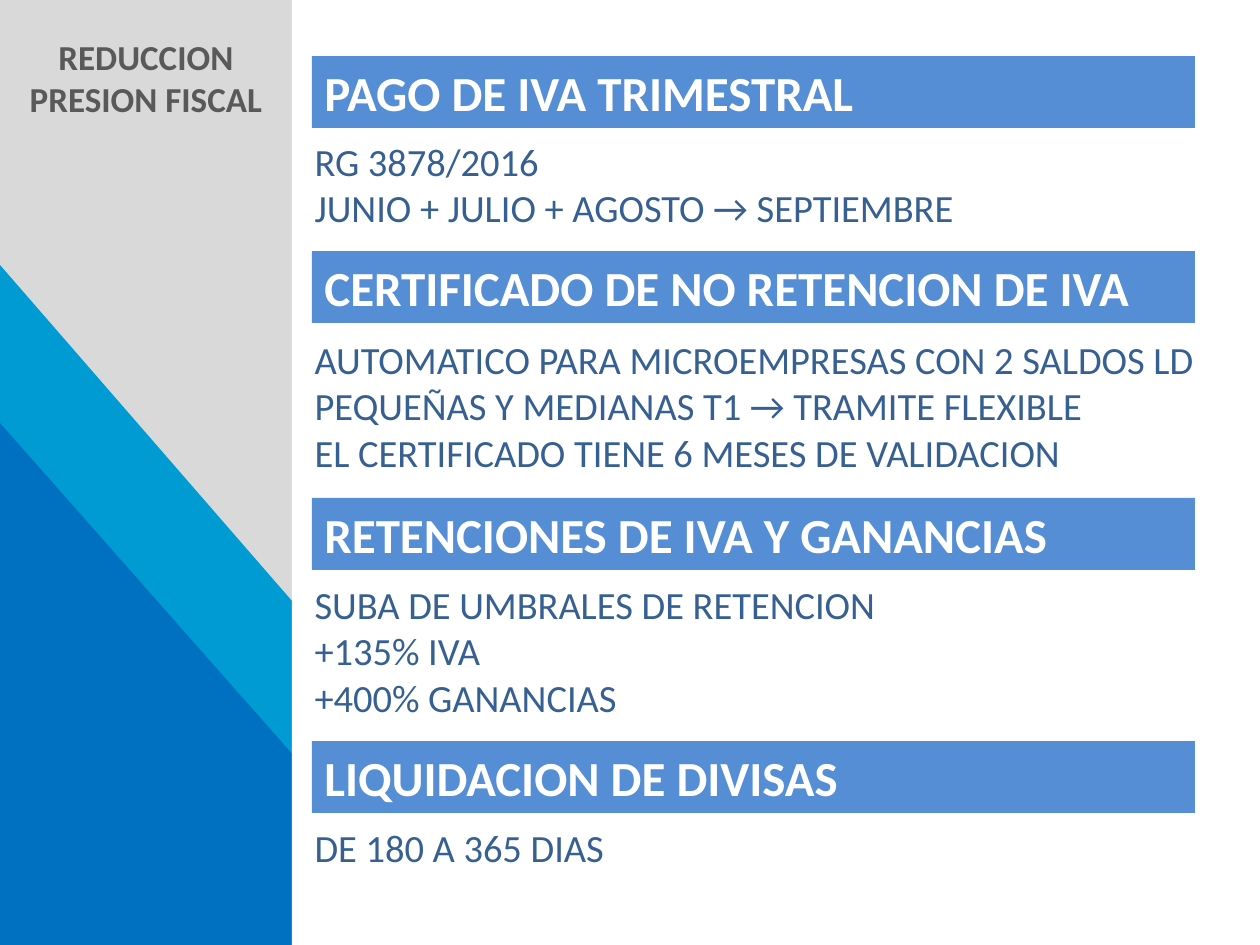
from typing import NamedTuple

from lxml import etree
from pptx import Presentation
from pptx import util as u
from pptx.dml.color import RGBColor
from pptx.enum import shapes, text
from pptx.oxml.ns import qn

SCALE = u.Inches(1) / 126  # EMU per px
PAGE_W, PAGE_H = 1260, 945
PANEL_W = 292
BAR_X, BAR_W, BAR_H = 312, 883, 72
BODY_X, BODY_W = 302, 912
COMPARISON_LAYOUT = 4  # a title and four body placeholders

FONT = "Calibri"
WHITE = RGBColor(0xFF, 0xFF, 0xFF)
LIGHT_GREY = RGBColor(0xD9, 0xD9, 0xD9)
DARK_GREY = RGBColor(0x59, 0x59, 0x59)
CYAN = RGBColor(0x00, 0x9B, 0xD2)
DEEP_BLUE = RGBColor(0x00, 0x70, 0xC0)
BAR_BLUE = RGBColor(0x55, 0x8E, 0xD5)
TEXT_BLUE = RGBColor(0x37, 0x60, 0x92)


class Box(NamedTuple):
    left: int
    top: int
    width: int
    height: int


class Panel(NamedTuple):
    kind: shapes.MSO_SHAPE
    box: Box
    color: RGBColor


class Style(NamedTuple):
    size: int
    color: RGBColor
    bold: bool
    align: text.PP_ALIGN


class Section(NamedTuple):
    bar_top: int
    heading: str
    body_top: int
    body_height: int
    lines: tuple[str, ...]


TITLE = Style(20, DARK_GREY, True, text.PP_ALIGN.CENTER)
HEADING = Style(28, WHITE, True, text.PP_ALIGN.LEFT)
BODY = Style(22, TEXT_BLUE, False, text.PP_ALIGN.LEFT)

RECTANGLE = shapes.MSO_SHAPE.RECTANGLE
TRIANGLE = shapes.MSO_SHAPE.RIGHT_TRIANGLE

PANELS = (
    Panel(RECTANGLE, Box(0, 0, PANEL_W, PAGE_H), LIGHT_GREY),
    Panel(TRIANGLE, Box(0, 265, 591, PAGE_H - 265), CYAN),
    Panel(TRIANGLE, Box(0, 423, 461, PAGE_H - 423), DEEP_BLUE),
    Panel(RECTANGLE, Box(PANEL_W, 0, PAGE_W - PANEL_W, PAGE_H), WHITE),
)

SECTIONS = (
    Section(56, "PAGO DE IVA TRIMESTRAL", 132, 106,
            ("RG 3878/2016", "JUNIO + JULIO + AGOSTO → SEPTIEMBRE")),
    Section(251, "CERTIFICADO DE NO RETENCION DE IVA", 330, 152,
            ("AUTOMATICO PARA MICROEMPRESAS CON 2 SALDOS LD",
             "PEQUEÑAS Y MEDIANAS T1 → TRAMITE FLEXIBLE",
             "EL CERTIFICADO TIENE 6 MESES DE VALIDACION")),
    Section(498, "RETENCIONES DE IVA Y GANANCIAS", 575, 152,
            ("SUBA DE UMBRALES DE RETENCION", "+135% IVA", "+400% GANANCIAS")),
    Section(741, "LIQUIDACION DE DIVISAS", 818, 59, ("DE 180 A 365 DIAS",)),
)


def px(length: int) -> int:
    return round(length * SCALE)


def draw_panel(page, panel: Panel):
    shape = page.shapes.add_shape(panel.kind, *map(px, panel.box))
    shape.shadow.inherit = False
    shape.fill.solid()
    shape.fill.fore_color.rgb = panel.color
    shape.line.fill.background()
    return shape


def write(shape, content: str, style: Style) -> None:
    frame = shape.text_frame
    frame.text = content
    frame.word_wrap = True
    frame.auto_size = text.MSO_AUTO_SIZE.SHAPE_TO_FIT_TEXT
    frame.vertical_anchor = text.MSO_ANCHOR.TOP
    for para in frame.paragraphs:
        para.alignment = style.align
        para.space_before = u.Pt(0)
        para.line_spacing = 1.0
        for span in para.runs:
            span.font.name = FONT
            span.font.size = u.Pt(style.size)
            span.font.bold = style.bold
            span.font.color.rgb = style.color


def place(holder, box: Box) -> None:
    """Move a placeholder to its box and in front of what is drawn so far."""
    holder.left, holder.top, holder.width, holder.height = map(px, box)
    holder.element.getparent().append(holder.element)


def remove_bullets(shape) -> None:
    for para in shape.text_frame.paragraphs:
        properties = para._p.get_or_add_pPr()
        properties.set("marL", "0")
        properties.set("indent", "0")
        etree.SubElement(properties, qn("a:buNone"))


def draw_section(page, holder, section: Section) -> None:
    place(holder, Box(BODY_X, section.body_top, BODY_W, section.body_height))
    write(holder, "\n".join(section.lines), BODY)
    remove_bullets(holder)
    bar = draw_panel(page, Panel(
        RECTANGLE, Box(BAR_X, section.bar_top, BAR_W, BAR_H), BAR_BLUE))
    write(bar, section.heading, HEADING)


def main() -> None:
    deck = Presentation()
    deck.slide_width, deck.slide_height = px(PAGE_W), px(PAGE_H)
    page = deck.slides.add_slide(deck.slide_layouts[COMPARISON_LAYOUT])
    title, *bodies = page.placeholders

    for panel in PANELS:
        draw_panel(page, panel)
    place(title, Box(0, 29, PANEL_W, 97))
    write(title, "REDUCCION PRESION FISCAL", TITLE)
    for holder, section in zip(bodies, SECTIONS):
        draw_section(page, holder, section)

    deck.save("out.pptx")


if __name__ == "__main__":
    main()
